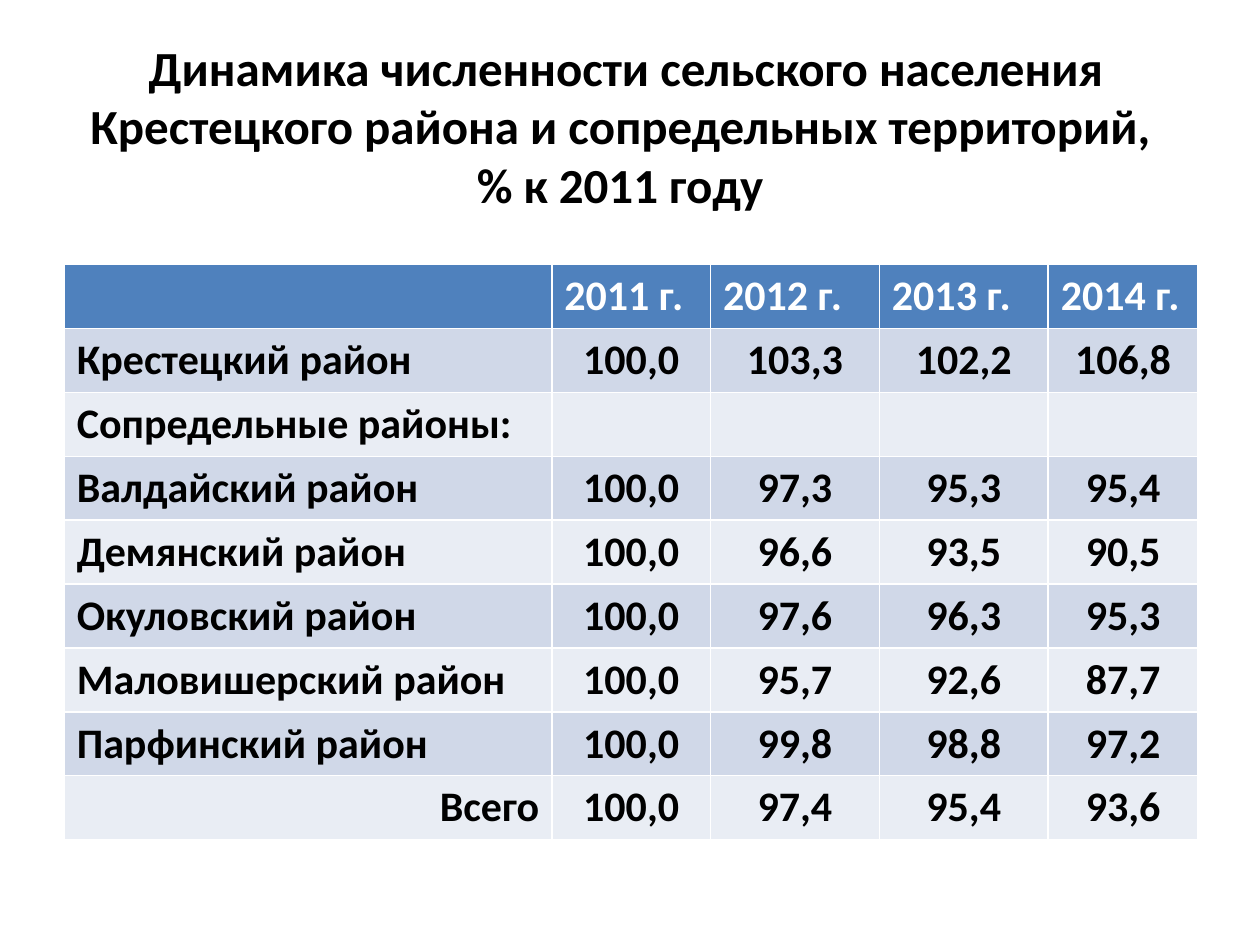
import pptx
import pptx.util
import pptx.dml.color
import pptx.enum.text

TITLE = ("Динамика численности сельского населения Крестецкого района "
         "и сопредельных территорий, \v% к 2011 году ")
HEADER = ("", "2011 г.", "2012 г.", "2013 г.", "2014 г.")
ROWS = [
    ("Крестецкий район", "100,0", "103,3", "102,2", "106,8"),
    ("Сопредельные районы:", "", "", "", ""),
    ("Валдайский район", "100,0", "97,3", "95,3", "95,4"),
    ("Демянский район", "100,0", "96,6", "93,5", "90,5"),
    ("Окуловский район", "100,0", "97,6", "96,3", "95,3"),
    ("Маловишерский район", "100,0", "95,7", "92,6", "87,7"),
    ("Парфинский район", "100,0", "99,8", "98,8", "97,2"),
    ("Всего", "100,0", "97,4", "95,4", "93,6"),
]
COLUMN_WIDTHS = (3.87, 1.26, 1.34, 1.34, 1.19)
ROW_HEIGHT = 0.5
FONT = "Calibri"
BLACK = pptx.dml.color.RGBColor(0x00, 0x00, 0x00)
WHITE = pptx.dml.color.RGBColor(0xFF, 0xFF, 0xFF)
HEADER_BLUE = pptx.dml.color.RGBColor(0x4F, 0x81, 0xBD)
BANDS = (pptx.dml.color.RGBColor(0xE9, 0xED, 0xF4),
         pptx.dml.color.RGBColor(0xD0, 0xD8, 0xE8))
ALIGN = pptx.enum.text.PP_ALIGN
inches = pptx.util.Inches


def write_text(text_frame, text, size, color, alignment):
    text_frame.text = text
    paragraph = text_frame.paragraphs[0]
    paragraph.alignment = alignment
    for run in paragraph.runs:
        run.font.name = FONT
        run.font.size = pptx.util.Pt(size)
        run.font.bold = True
        run.font.color.rgb = color


def cell_alignment(row, column):
    if row == 0:
        return ALIGN.LEFT
    if column > 0:
        return ALIGN.CENTER
    return ALIGN.RIGHT if row == len(ROWS) else ALIGN.LEFT


def add_title(slide):
    title = slide.shapes.title
    title.left, title.top = inches(0.12), inches(0.13)
    title.width, title.height = inches(9.69), inches(1.73)
    title.text_frame.vertical_anchor = pptx.enum.text.MSO_ANCHOR.MIDDLE
    write_text(title.text_frame, TITLE, 28, BLACK, ALIGN.CENTER)


def add_population_table(slide):
    lines = [HEADER] + ROWS
    table = slide.shapes.add_table(
        len(lines), len(HEADER), inches(0.51), inches(2.1),
        inches(sum(COLUMN_WIDTHS)), inches(ROW_HEIGHT * len(lines))).table
    for column, width in zip(table.columns, COLUMN_WIDTHS):
        column.width = inches(width)
    for row, values in enumerate(lines):
        for column, value in enumerate(values):
            cell = table.cell(row, column)
            cell.fill.solid()
            cell.fill.fore_color.rgb = BANDS[row % 2] if row else HEADER_BLUE
            write_text(cell.text_frame, value, 24, BLACK if row else WHITE,
                       cell_alignment(row, column))


def main():
    presentation = pptx.Presentation()
    presentation.slide_width = inches(10)
    presentation.slide_height = inches(7.5)
    slide = presentation.slides.add_slide(presentation.slide_layouts[5])
    add_title(slide)
    add_population_table(slide)
    presentation.save("out.pptx")


if __name__ == "__main__":
    main()
